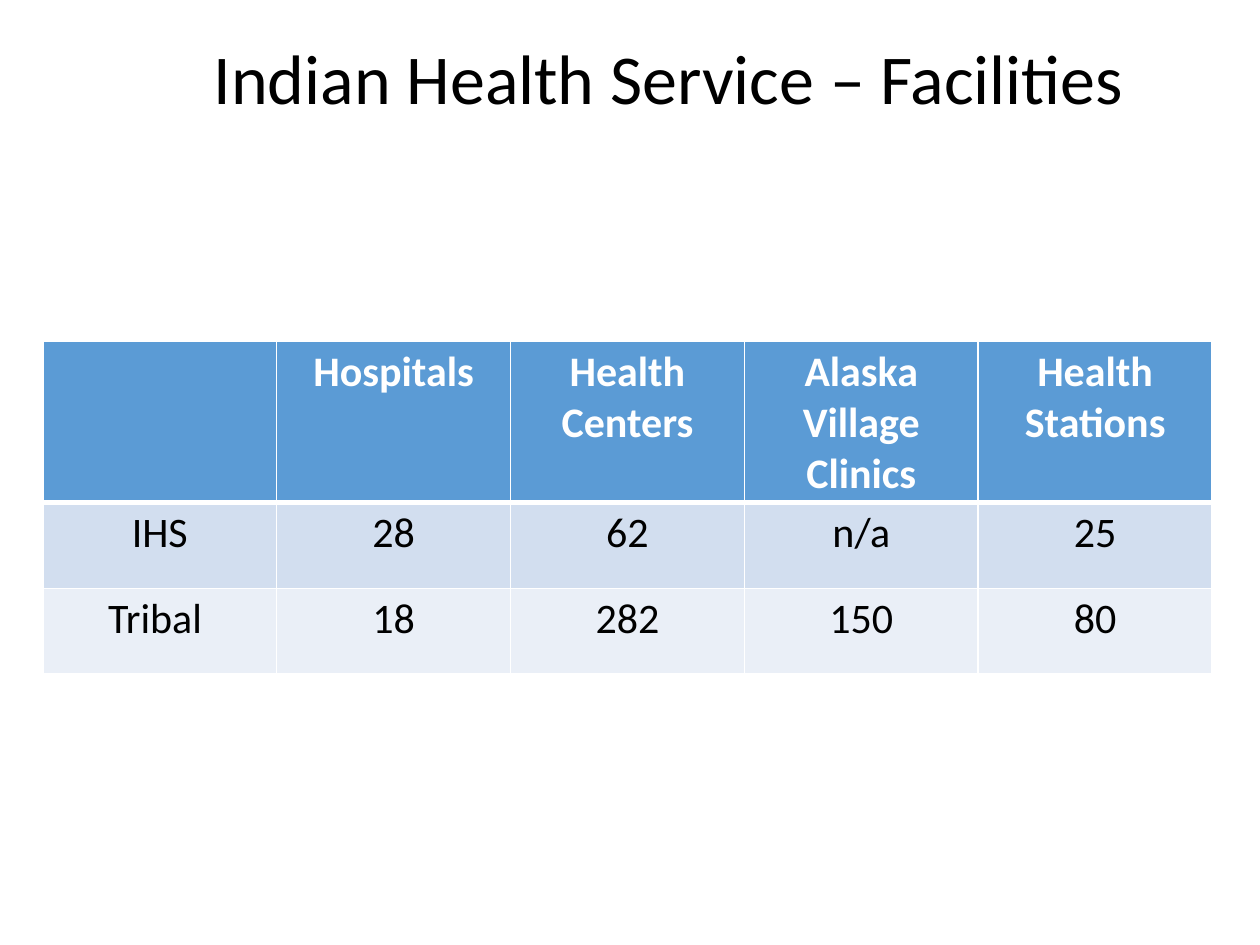
from lxml.etree import SubElement
from pptx import Presentation
from pptx.dml.color import RGBColor as Rgb
from pptx.enum.text import MSO_ANCHOR as Anchor, PP_ALIGN as Align
from pptx.oxml.ns import qn
from pptx.util import Inches, Pt

COLORS = {"text": "000000", "white": "FFFFFF", "header": "5B9BD5",
          "odd_row": "D2DEEF", "even_row": "EAEFF7"}
FONT = "Calibri"
TITLE = "Indian Health Service – Facilities "
FACILITIES = [
    ["", "Hospitals", "Health Centers", "Alaska Village Clinics", "Health Stations"],
    ["IHS", "28", "62", "n/a", "25"],
    ["Tribal ", "18", "282", "150", "80"],
]
ROW_SHARES = [0.46, 0.27, 0.27]


def style_paragraph(paragraph, size, color, bold=False):
    """Centre a paragraph and set its font."""
    paragraph.alignment = Align.CENTER
    font = paragraph.font
    font.name, font.size, font.bold = FONT, Pt(size), bold
    font.color.rgb = Rgb.from_string(COLORS[color])


def add_title(slide, left, top, width, height):
    """Place the title at the top of the given box."""
    frame = slide.shapes.add_textbox(left, top, width, height).text_frame
    frame.word_wrap = True
    frame.vertical_anchor = Anchor.TOP
    heading = frame.paragraphs[0]
    heading.text = TITLE
    heading.line_spacing = 0.9
    style_paragraph(heading, 40, "text")


def add_borders(cell, widths):
    """Draw white borders on a cell, with widths in points by side."""
    properties = cell._tc.get_or_add_tcPr()
    for side, width in widths.items():
        line = SubElement(properties, qn(f"a:ln{side}"), w=str(Pt(width)))
        fill = SubElement(line, qn("a:solidFill"))
        SubElement(fill, qn("a:srgbClr"), val=COLORS["white"])


def style_cell(cell, row):
    """Give a cell the margins, borders, fill and font of its row."""
    cell.margin_left = cell.margin_right = Inches(0.07)
    cell.margin_top = cell.margin_bottom = Inches(0.04)
    add_borders(cell, {"L": 1, "R": 1, "T": 3 if row == 1 else 1,
                       "B": 3 if row == 0 else 1})
    cell.fill.solid()
    row_fill = ["header", "odd_row", "even_row"][row]
    cell.fill.fore_color.rgb = Rgb.from_string(COLORS[row_fill])
    is_header = row == 0
    style_paragraph(cell.text_frame.paragraphs[0], 24,
                    "white" if is_header else "text", is_header)


def add_facilities(slide, left, top, width, height):
    """Fill the given box with the table of facility counts."""
    column_count = len(FACILITIES[0])
    table = slide.shapes.add_table(len(FACILITIES), column_count,
                                   left, top, width, height).table
    for column in table.columns:
        column.width = int(width / column_count)
    for row, counts in enumerate(FACILITIES):
        table.rows[row].height = int(height * ROW_SHARES[row])
        for column, content in enumerate(counts):
            cell = table.cell(row, column)
            cell.text = content
            style_cell(cell, row)


def main():
    """Build the slide and save it."""
    deck = Presentation()
    deck.slide_width, deck.slide_height = Inches(10), Inches(7.5)
    slide = deck.slides.add_slide(deck.slide_layouts[6])
    add_title(slide, Inches(1.12), Inches(0.3), Inches(8.5), Inches(1.25))
    add_facilities(slide, Inches(0.34), Inches(2.71), Inches(9.28), Inches(2.52))
    deck.save("out.pptx")


if __name__ == "__main__":
    main()
